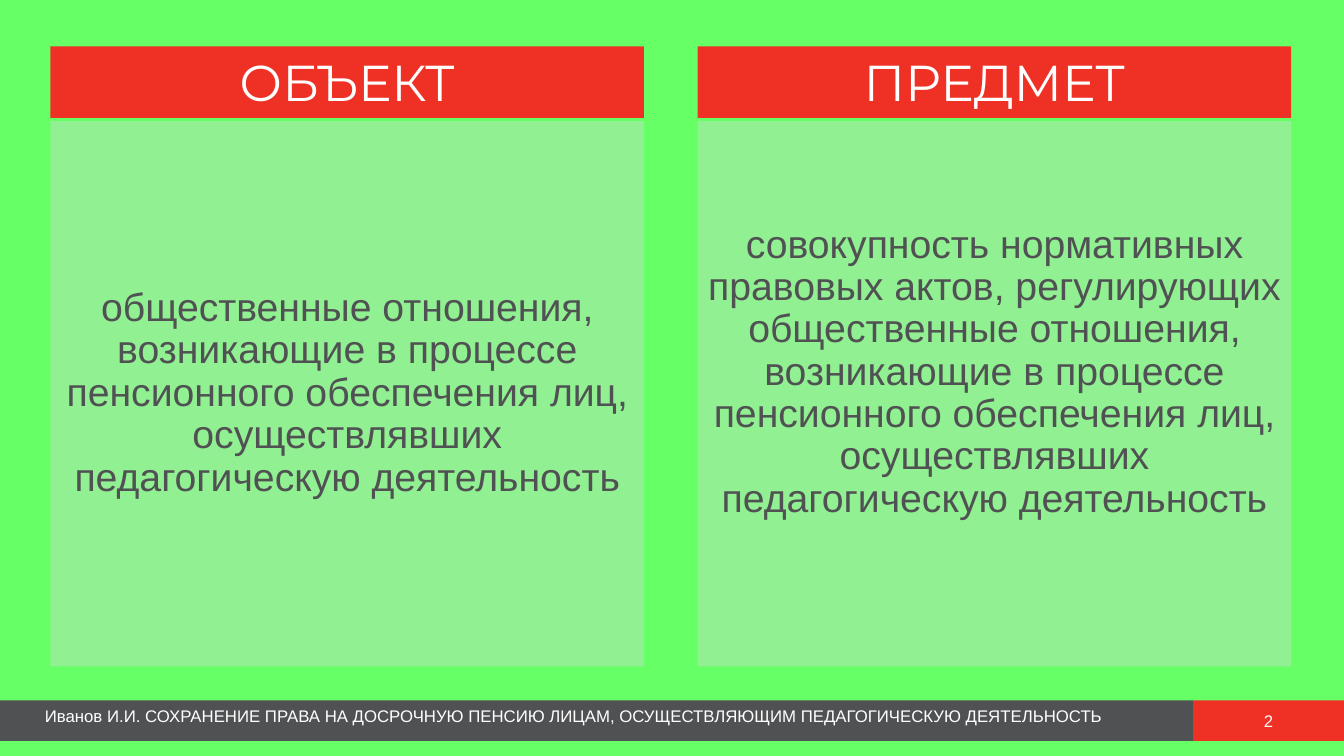
from pptx import Presentation
from pptx import util as u
from pptx.dml import color
from pptx.enum import text
from pptx.oxml import xmlchemy

RED = "EE3124"
GRAY = "505153"
WHITE = "FFFFFF"
PANEL = "D9D9D9"
GREEN = "66FF66"


def paint(fill, hex_color):
    fill.solid()
    fill.fore_color.rgb = color.RGBColor.from_string(hex_color)


def set_alpha(shape, percent):
    solid_color = shape.element.xpath("./p:spPr/a:solidFill/a:srgbClr")[0]
    alpha = xmlchemy.OxmlElement("a:alpha")
    alpha.set("val", str(percent * 1000))
    solid_color.append(alpha)


def format_box(shape, box, fill, words, size, font_name, font_color,
               anchor=text.MSO_ANCHOR.MIDDLE, align=text.PP_ALIGN.CENTER, indent=0):
    shape.left, shape.top, shape.width, shape.height = (u.Cm(length) for length in box)
    paint(shape.fill, fill)
    frame = shape.text_frame
    frame.text = words
    frame.word_wrap = True
    frame.auto_size = text.MSO_AUTO_SIZE.NONE
    frame.vertical_anchor = anchor
    paragraph = frame.paragraphs[0]
    paragraph.alignment = align
    paragraph.space_before = u.Pt(0)
    paragraph.font.name = font_name
    paragraph.font.size = u.Pt(size)
    paragraph.font.bold = False
    paragraph.font.color.rgb = color.RGBColor.from_string(font_color)
    properties = paragraph._p.get_or_add_pPr()
    properties.set("marL", str(u.Cm(indent)))
    properties.set("indent", "0")
    properties.insert_element_before(
        xmlchemy.OxmlElement("a:buNone"), "a:tabLst", "a:defRPr", "a:extLst")
    return paragraph


def add_column(heading, body, box, title, words, bottom_inset):
    left, top, width, height = box
    heading_height, gap = 1.8, 0.08
    format_box(heading, (left, top, width, heading_height), RED, title,
               36, "Montserrat", WHITE, text.MSO_ANCHOR.TOP)
    body_top = heading_height + gap
    paragraph = format_box(body, (left, top + body_top, width, height - body_top),
                           PANEL, words, 28, "Arial", GRAY)
    paragraph.line_spacing = 0.9
    paragraph.space_before = u.Pt(10)
    body.text_frame.margin_bottom = u.Cm(bottom_inset)
    set_alpha(body, 38)


def add_bar(slide, box, fill, words, **layout):
    shape = slide.shapes.add_shape(1, 0, 0, 0, 0)
    shape.shadow.inherit = False
    shape.line.fill.background()
    format_box(shape, box, fill, words, 12, "Arial", WHITE, **layout)


def add_footer(slide, box):
    left, top, width, height = box
    number_width = 3.8
    text_width = width - number_width
    add_bar(slide, (left, top, text_width, height), GRAY,
            "Иванов И.И. СОХРАНЕНИЕ ПРАВА НА ДОСРОЧНУЮ ПЕНСИЮ ЛИЦАМ, "
            "ОСУЩЕСТВЛЯЮЩИМ ПЕДАГОГИЧЕСКУЮ ДЕЯТЕЛЬНОСТЬ",
            anchor=text.MSO_ANCHOR.TOP, align=text.PP_ALIGN.JUSTIFY, indent=0.88)
    add_bar(slide, (left + text_width, top, number_width, height), RED, "2")


def build_comparison(presentation):
    slide = presentation.slides.add_slide(presentation.slide_layouts[4])
    paint(slide.background.fill, GREEN)
    title, *parts = slide.placeholders
    title.element.getparent().remove(title.element)
    relations = "общественные отношения, возникающие в процессе пенсионного обеспечения лиц, осуществлявших педагогическую деятельность"
    columns = [
        ("ОБЪЕКТ", relations, 0.13),
        ("ПРЕДМЕТ", "совокупность нормативных правовых актов, регулирующих " + relations, 1.2),
    ]
    for index, column in enumerate(columns):
        heading, body = parts[2 * index:2 * index + 2]
        add_column(heading, body, (1.27 + 16.31 * index, 1.17, 14.96, 15.62), *column)
    add_footer(slide, (0, 17.65, 33.87, 1.02))


def main():
    presentation = Presentation()
    presentation.slide_width = u.Cm(33.87)
    presentation.slide_height = u.Cm(19.05)
    build_comparison(presentation)
    presentation.save("out.pptx")


if __name__ == "__main__":
    main()
